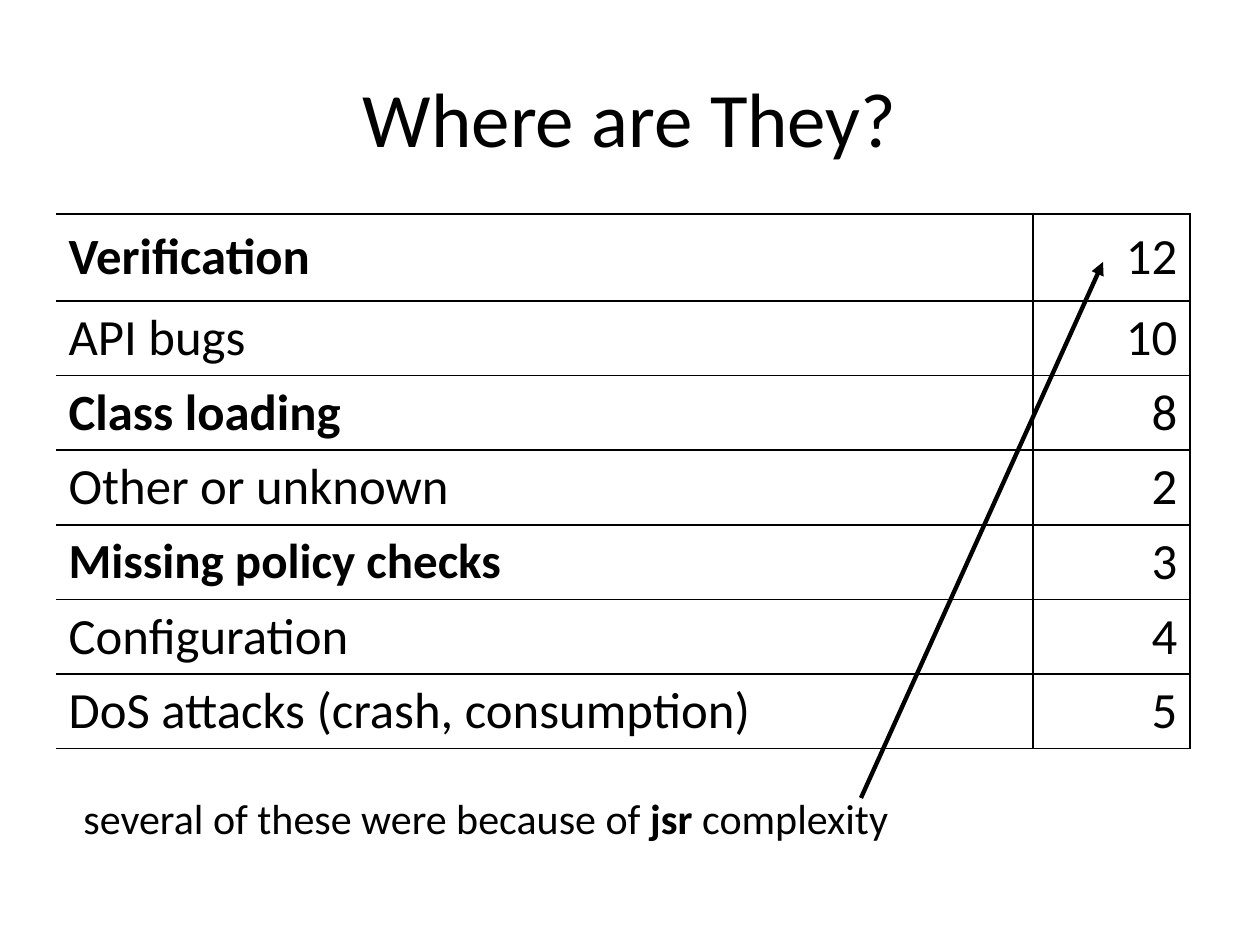
from pptx import Presentation
from pptx.dml.color import RGBColor as RGB
from pptx.enum.shapes import MSO_CONNECTOR as Conn
from pptx.enum.text import MSO_ANCHOR as Anchor, MSO_AUTO_SIZE as Auto, PP_ALIGN as Align
from pptx.oxml import parse_xml
from pptx.oxml.ns import nsdecls
from pptx.util import Pt

COLORS = {"ink": "000000"}
SCALE = 914400 / 126


def px(n):
    """Turn pixels into EMU."""
    return round(n * SCALE)


def write(para, text, size, bold=False):
    run = para.add_run()
    run.text = text
    style = {"name": "Calibri", "size": Pt(size), "bold": bold}
    for key, val in style.items():
        setattr(run.font, key, val)
    run.font.color.rgb = RGB.from_string(COLORS["ink"])


prs = Presentation()
prs.slide_width, prs.slide_height = px(1260), px(945)
slide = prs.slides.add_slide(prs.slide_layouts[5])

# Title
title = slide.shapes.title
place = {"left": 63, "top": 38, "width": 1134, "height": 157}
for key, val in place.items():
    setattr(title, key, px(val))
frame = title.text_frame
frame.vertical_anchor = Anchor.MIDDLE
frame.paragraphs[0].alignment = Align.CENTER
write(frame.paragraphs[0], "Where are They?", 44)

# Table of bug counts: label, count, bold label, label size
bugs = [
    ("Verification", 12, True, 29),
    ("API bugs", 10, False, 29),
    ("Class loading", 8, True, 29),
    ("Other or unknown", 2, False, 29),
    ("Missing policy checks", 3, True, 28),
    ("Configuration", 4, False, 29),
    ("DoS attacks (crash, consumption)", 5, False, 29),
]
widths = [977, 157]
heights = [87] + [74] * (len(bugs) - 1)
table = slide.shapes.add_table(
    len(bugs), 2, px(56), px(214), px(sum(widths)), px(sum(heights))
).table
table.first_row = table.horz_banding = False
for col, width in zip(table.columns, widths):
    col.width = px(width)
for row, height in zip(table.rows, heights):
    row.height = px(height)

solid = f'<a:solidFill><a:srgbClr val="{COLORS["ink"]}"/></a:solidFill>'
for r, (label, count, bold, size) in enumerate(bugs):
    items = [(label, Align.LEFT, size, bold), (str(count), Align.RIGHT, 29, False)]
    for c, (text, align, pts, heavy) in enumerate(items):
        cell = table.cell(r, c)
        cell.vertical_anchor = Anchor.MIDDLE
        para = cell.text_frame.paragraphs[0]
        para.alignment = align
        write(para, text, pts, heavy)
        props = cell._tc.get_or_add_tcPr()
        for side in "LRTB":
            ink = "<a:noFill/>" if side == "L" and c == 0 else solid
            props.append(parse_xml(
                f'<a:ln{side} {nsdecls("a")} w="{Pt(1)}">{ink}</a:ln{side}>'
            ))
        cell.fill.background()

# Remark under the table
note = slide.shapes.add_textbox(px(71), px(786), px(838), px(63)).text_frame
note.word_wrap = False
note.auto_size = Auto.SHAPE_TO_FIT_TEXT
parts = [("several of these were because of ", False), ("jsr", True), (" complexity", False)]
for text, bold in parts:
    write(note.paragraphs[0], text, 24, bold)

# Arrow from the remark to the first count
arrow = slide.shapes.add_connector(Conn.STRAIGHT, px(861), px(798), px(1103), px(262))
arrow.line.width = Pt(2.5)
arrow.line.color.rgb = RGB.from_string(COLORS["ink"])
arrow.line._get_or_add_ln().append(
    parse_xml(f'<a:tailEnd {nsdecls("a")} type="triangle"/>')
)
arrow._element.spPr.append(parse_xml(f'<a:effectLst {nsdecls("a")}/>'))

prs.save("out.pptx")
